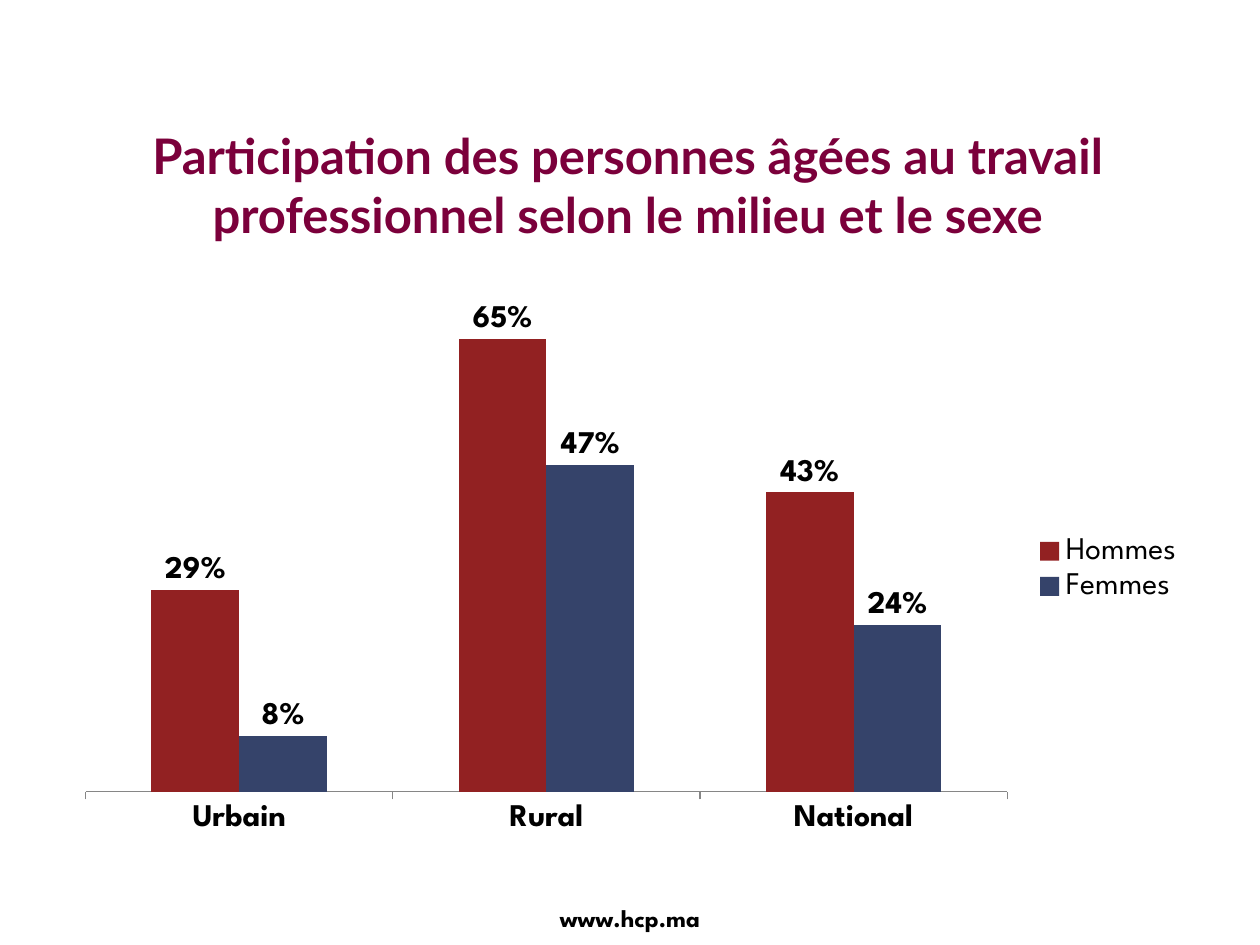
"""Build the slide on older people's participation in work, by area and sex."""
from pptx import Presentation
from pptx import util as u
from pptx.chart import data
from pptx.dml.color import RGBColor
from pptx.enum import chart as kinds
from pptx.enum import text

PLUM = RGBColor(0x7B, 0x00, 0x3B)
BLACK = RGBColor(0x00, 0x00, 0x00)
RED = RGBColor(0x92, 0x21, 0x22)
NAVY = RGBColor(0x35, 0x43, 0x6A)
GREY = RGBColor(0x86, 0x86, 0x86)

TITLE = {"name": "Lato", "size": u.Pt(28), "bold": True}
FOOTER = {"name": "League Spartan", "size": u.Pt(14), "bold": True}
PLAIN = {"name": "League Spartan", "size": u.Pt(18), "bold": False}
STRONG = {**PLAIN, "bold": True}

AREAS = ("Urbain", "Rural", "National")
RATES = (
    ("Hommes", (0.29, 0.65, 0.43), RED),
    ("Femmes", (0.08, 0.47, 0.24), NAVY),
)


def set_font(font, style, color):
    for name, value in style.items():
        setattr(font, name, value)
    font.color.rgb = color


def add_text(page, words, place, style, color):
    box = page.shapes.add_textbox(*map(u.Inches, place))
    frame = box.text_frame
    frame.word_wrap = True
    frame.vertical_anchor = text.MSO_ANCHOR.MIDDLE
    para = frame.paragraphs[0]
    para.alignment = text.PP_ALIGN.CENTER
    span = para.add_run()
    span.text = words
    set_font(span.font, style, color)


def style_axes(chart):
    areas, rates = chart.category_axis, chart.value_axis
    areas.major_tick_mark = kinds.XL_TICK_MARK.OUTSIDE
    areas.format.line.color.rgb = GREY
    areas.format.line.width = u.Pt(0.75)
    set_font(areas.tick_labels.font, STRONG, BLACK)
    rates.visible = False
    rates.has_major_gridlines = False
    rates.minimum_scale, rates.maximum_scale = 0, 0.7


def style_series(series, color):
    series.format.fill.solid()
    series.format.fill.fore_color.rgb = color
    labels = series.data_labels
    settings = {
        "show_value": True,
        "number_format": "0%",
        "number_format_is_linked": False,
        "position": kinds.XL_LABEL_POSITION.OUTSIDE_END,
    }
    for name, value in settings.items():
        setattr(labels, name, value)
    set_font(labels.font, STRONG, BLACK)


def add_rates_chart(page, place):
    content = data.CategoryChartData(number_format="0%")
    content.categories = AREAS
    for name, values, _ in RATES:
        content.add_series(name, values)
    frame = page.shapes.add_chart(
        kinds.XL_CHART_TYPE.COLUMN_CLUSTERED, *map(u.Inches, place), content
    )
    chart = frame.chart
    set_font(chart.font, PLAIN, BLACK)
    chart.has_title = False
    chart.has_legend = True
    chart.legend.position = kinds.XL_LEGEND_POSITION.RIGHT
    chart.legend.include_in_layout = False
    set_font(chart.legend.font, PLAIN, BLACK)
    plot = chart.plots[0]
    plot.gap_width, plot.overlap, plot.vary_by_categories = 150, 0, False
    style_axes(chart)
    for series, (_, _, color) in zip(plot.series, RATES):
        style_series(series, color)


def main():
    deck = Presentation()
    deck.slide_width, deck.slide_height = u.Inches(10), u.Inches(7.5)
    page = deck.slides.add_slide(deck.slide_layouts[6])
    add_text(page, "www.hcp.ma", (3.82, 7.12, 2.36, 0.33), FOOTER, BLACK)
    add_text(
        page,
        "Participation des personnes âgées au travail professionnel"
        " selon le milieu et le sexe",
        (1.02, 0.84, 7.92, 1.25),
        TITLE,
        PLUM,
    )
    add_rates_chart(page, (0.5, 2.33, 9, 4.37))
    deck.save("out.pptx")


if __name__ == "__main__":
    main()
